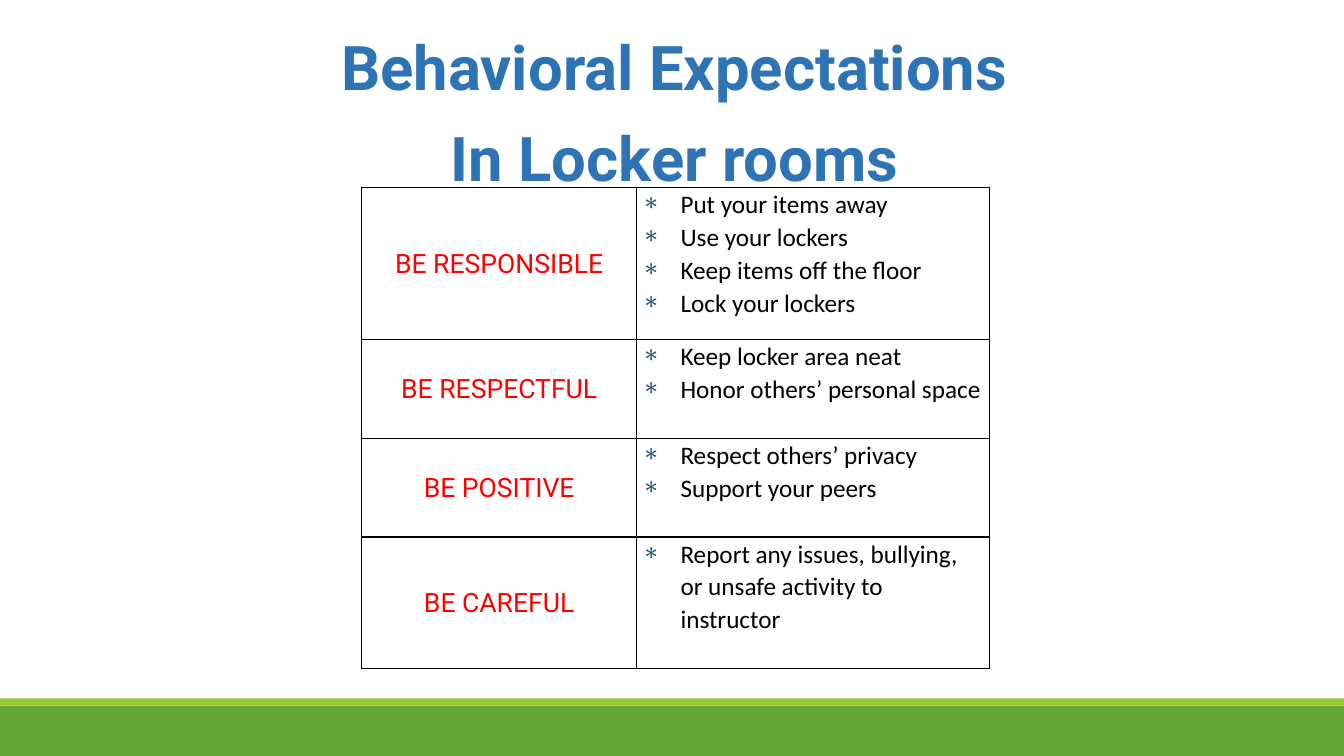
"""Build the locker room behavioral expectations slide."""
from lxml.etree import SubElement
from pptx import Presentation
from pptx.dml.color import RGBColor
from pptx.enum.shapes import MSO_SHAPE
from pptx.enum.text import MSO_ANCHOR, MSO_AUTO_SIZE, PP_ALIGN
from pptx.oxml.ns import qn
from pptx.util import Cm, Pt

TITLE = ["Behavioral Expectations", "In Locker rooms"]
EXPECTATIONS = [
    ("BE RESPONSIBLE", 3.83, ["Put your items away", "Use your lockers",
                              "Keep items off the floor", "Lock your lockers"]),
    ("BE RESPECTFUL", 2.49, ["Keep locker area neat", "Honor others’ personal space"]),
    ("BE POSITIVE", 2.49, ["Respect others’ privacy", "Support your peers"]),
    ("BE CAREFUL", 3.32, ["Report any issues, bullying, or unsafe activity to instructor"]),
]
COLORS = {"title": "2E74B5", "value": "FF0000", "rule": "000000", "bullet": "1F4E79",
          "border": "000000", "base": "63A537", "stripe": "99CB38"}
COLUMN_WIDTHS = [6.94, 8.88]
BARS = [("base", 17.78, 1.27), ("stripe", 17.6, 0.18)]
LINE_SPACING = 1.07


def color(name):
    return RGBColor.from_string(COLORS[name])


def format_paragraph(paragraph, font_name, size, color_name, bold=False):
    paragraph.line_spacing = LINE_SPACING
    paragraph.font.name = font_name
    paragraph.font.size = Pt(size)
    paragraph.font.bold = bold
    paragraph.font.color.rgb = color(color_name)


def add_solid_fill(parent, color_name):
    fill = SubElement(parent, qn("a:solidFill"))
    SubElement(fill, qn("a:srgbClr"), val=COLORS[color_name])


def add_bullet(paragraph):
    properties = paragraph._p.get_or_add_pPr()
    properties.set("marL", str(Cm(0.97)))
    properties.set("indent", str(-Cm(0.97)))
    bullet_color = SubElement(properties, qn("a:buClr"))
    SubElement(bullet_color, qn("a:srgbClr"), val=COLORS["bullet"])
    SubElement(properties, qn("a:buChar"), char="∗")


def format_cell(cell, anchor):
    cell.margin_left = cell.margin_right = Cm(0.13)
    cell.margin_top = cell.margin_bottom = 0
    cell.vertical_anchor = anchor
    properties = cell._tc.get_or_add_tcPr()
    for side in ("lnL", "lnR", "lnT", "lnB"):
        add_solid_fill(SubElement(properties, qn(f"a:{side}"), w=str(Pt(1))), "border")
    cell.fill.background()


def add_bars(slide, width):
    for color_name, top, height in BARS:
        bar = slide.shapes.add_shape(MSO_SHAPE.RECTANGLE, 0, Cm(top), width, Cm(height))
        bar.shadow.inherit = False
        bar.fill.solid()
        bar.fill.fore_color.rgb = color(color_name)
        bar.line.fill.background()


def fill_title(title):
    title.left, title.top, title.width, title.height = Cm(3.91), Cm(0.48), Cm(26.19), Cm(4.57)
    frame = title.text_frame
    frame.text = "\n".join(TITLE)
    frame.word_wrap = True
    frame.auto_size = MSO_AUTO_SIZE.NONE
    frame.vertical_anchor = MSO_ANCHOR.TOP
    for paragraph in frame.paragraphs:
        paragraph.alignment = PP_ALIGN.CENTER
        paragraph.space_before = Pt(0)
        paragraph.space_after = Pt(8)
        format_paragraph(paragraph, "Roboto", 44, "title", bold=True)


def add_expectations(slide):
    heights = [height for _, height, _ in EXPECTATIONS]
    table = slide.shapes.add_table(
        len(EXPECTATIONS), len(COLUMN_WIDTHS), Cm(9.11), Cm(4.72),
        Cm(sum(COLUMN_WIDTHS)), Cm(sum(heights))).table
    table.first_row = table.horz_banding = False
    for column, width in zip(table.columns, COLUMN_WIDTHS):
        column.width = Cm(width)
    for row, (value, height, rules) in zip(table.rows, EXPECTATIONS):
        row.height = Cm(height)
        value_cell, rules_cell = row.cells
        format_cell(value_cell, MSO_ANCHOR.MIDDLE)
        format_cell(rules_cell, MSO_ANCHOR.TOP)
        value_cell.text = value
        heading = value_cell.text_frame.paragraphs[0]
        heading.alignment = PP_ALIGN.CENTER
        format_paragraph(heading, "Roboto", 19, "value")
        rules_cell.text = "\n".join(rules)
        for paragraph in rules_cell.text_frame.paragraphs:
            paragraph.line_spacing = LINE_SPACING
            add_bullet(paragraph)
            format_paragraph(paragraph, "Calibri", 18, "rule")


def main():
    presentation = Presentation()
    presentation.slide_width = Cm(33.87)
    presentation.slide_height = Cm(19.05)
    slide = presentation.slides.add_slide(presentation.slide_layouts[5])
    add_bars(slide, presentation.slide_width)
    fill_title(slide.shapes.title)
    add_expectations(slide)
    presentation.save("out.pptx")


if __name__ == "__main__":
    main()
